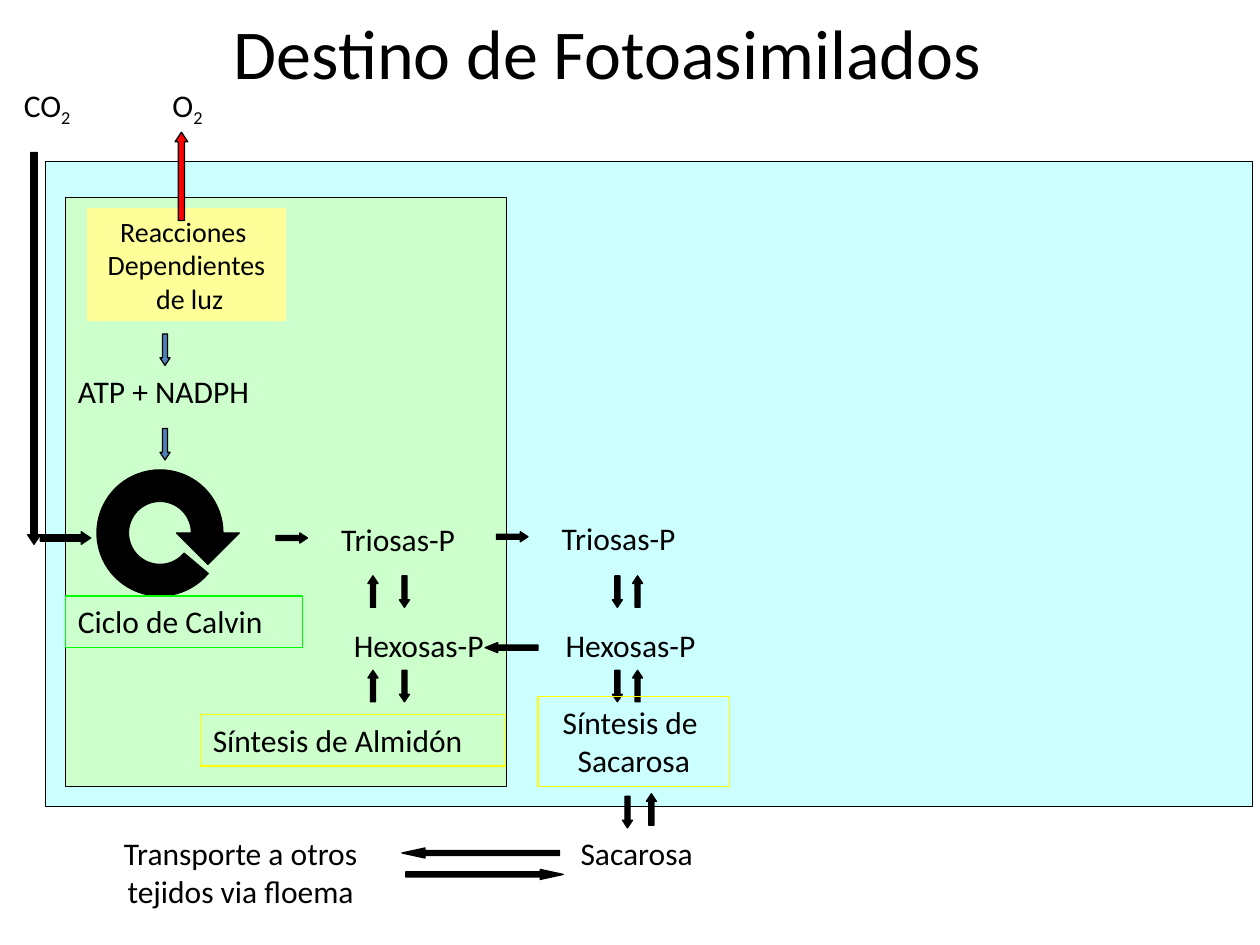
from dataclasses import dataclass
from math import cos, radians, sin
from typing import Optional

from pptx import Presentation
from pptx.dml.color import RGBColor
from pptx.enum.shapes import MSO_SHAPE
from pptx.enum.text import MSO_ANCHOR, MSO_AUTO_SIZE, PP_ALIGN
from pptx.util import Inches, Pt

BLACK = RGBColor(0x00, 0x00, 0x00)
CYAN = RGBColor(0xCC, 0xFF, 0xFF)
PALE_GREEN = RGBColor(0xCC, 0xFF, 0xCC)
PALE_YELLOW = RGBColor(0xFF, 0xFF, 0x99)
YELLOW = RGBColor(0xFF, 0xFF, 0x00)
GREEN = RGBColor(0x00, 0xFF, 0x00)
RED = RGBColor(0xFF, 0x00, 0x00)
BLUE = RGBColor(0x4F, 0x81, 0xBD)

UP, DOWN = MSO_SHAPE.UP_ARROW, MSO_SHAPE.DOWN_ARROW
LEFT, RIGHT = MSO_SHAPE.LEFT_ARROW, MSO_SHAPE.RIGHT_ARROW


@dataclass(frozen=True)
class Area:
    left: float
    top: float
    width: float
    height: float

    def lengths(self) -> tuple:
        return tuple(map(Inches, (self.left, self.top, self.width, self.height)))


@dataclass(frozen=True)
class Label:
    lines: tuple[str, ...]
    area: Area
    centred: bool = False
    size: int = 18
    fill: Optional[RGBColor] = None
    border: Optional[RGBColor] = None
    subscript: str = ""
    wrap: bool = False
    anchor: MSO_ANCHOR = MSO_ANCHOR.TOP
    auto_size: MSO_AUTO_SIZE = MSO_AUTO_SIZE.SHAPE_TO_FIT_TEXT


@dataclass(frozen=True)
class Arrow:
    kind: MSO_SHAPE
    area: Area
    head: float = 0.75
    fill: RGBColor = BLACK


def paint(shape, fill: Optional[RGBColor], border: Optional[RGBColor]) -> None:
    shape.shadow.inherit = False
    if fill is None:
        shape.fill.background()
    else:
        shape.fill.solid()
        shape.fill.fore_color.rgb = fill
    if border is None:
        shape.line.fill.background()
    else:
        shape.line.color.rgb = border
        shape.line.width = Pt(0.75)


def add_span(para, text: str, size: int):
    span = para.add_run()
    span.text = text
    for name, value in {"name": "Calibri", "size": Pt(size)}.items():
        setattr(span.font, name, value)
    span.font.color.rgb = BLACK
    return span


def draw_panel(page, area: Area, fill: RGBColor) -> None:
    panel = page.shapes.add_shape(MSO_SHAPE.RECTANGLE, *area.lengths())
    paint(panel, fill, BLACK)


def draw_label(page, label: Label) -> None:
    if label.fill or label.border:
        box = page.shapes.add_shape(MSO_SHAPE.RECTANGLE, *label.area.lengths())
        paint(box, label.fill, label.border)
    else:
        box = page.shapes.add_textbox(*label.area.lengths())
    frame = box.text_frame
    frame_format = {
        "word_wrap": label.wrap,
        "auto_size": label.auto_size,
        "vertical_anchor": label.anchor,
    }
    for name, value in frame_format.items():
        setattr(frame, name, value)
    for index, line in enumerate(label.lines):
        para = frame.add_paragraph() if index else frame.paragraphs[0]
        para.alignment = PP_ALIGN.CENTER if label.centred else PP_ALIGN.LEFT
        add_span(para, line, label.size)
    if label.subscript:
        span = add_span(para, label.subscript, label.size)
        span.font._element.set("baseline", "-25000")


def draw_arrow(page, arrow: Arrow) -> None:
    shape = page.shapes.add_shape(arrow.kind, *arrow.area.lengths())
    paint(shape, arrow.fill, BLACK)
    shape.adjustments[0] = 0.5
    shape.adjustments[1] = arrow.head


def arc(radius: float, angles: range) -> list[tuple[float, float]]:
    centre_x, centre_y = 1.27, 4.23
    return [
        (centre_x + radius * cos(radians(angle)), centre_y + radius * sin(radians(angle)))
        for angle in angles
    ]


def draw_calvin_cycle(page) -> None:
    inner = arc(0.25, range(360, 39, -5))
    outer = arc(0.5, range(40, 361, 5))
    head = [(1.9, 4.23), (1.65, 4.48), (1.4, 4.23)]
    points = [(Inches(x), Inches(y)) for x, y in inner + outer + head]
    builder = page.shapes.build_freeform(*points[0])
    builder.add_line_segments(points[1:], close=True)
    paint(builder.convert_to_shape(), BLACK, BLACK)


def exchange(down_left: float, up_left: float, down_top: float, up_top: float) -> list[Arrow]:
    return [
        Arrow(DOWN, Area(down_left, down_top, 0.08, 0.25)),
        Arrow(UP, Area(up_left, up_top, 0.08, 0.25)),
    ]


TITLE = Label(("Destino de Fotoasimilados",), Area(0.57, -0.22, 8.5, 1.25), centred=True,
              size=40, wrap=True, anchor=MSO_ANCHOR.MIDDLE, auto_size=MSO_AUTO_SIZE.NONE)
LIGHT_REACTIONS = Label(("Reacciones ", "Dependientes", " de luz"), Area(0.69, 1.65, 1.58, 0.9),
                        centred=True, size=16, fill=PALE_YELLOW, wrap=True)
LABELS = [
    Label(("CO",), Area(0.09, 0.63, 0.59, 0.4), subscript="2"),
    Label(("O",), Area(1.27, 0.63, 0.45, 0.4), subscript="2"),
    Label(("ATP + NADPH",), Area(0.52, 2.9, 1.85, 0.4)),
    Label(("Ciclo de Calvin",), Area(0.52, 4.73, 1.88, 0.41), border=GREEN),
    Label(("Triosas-P",), Area(2.61, 4.08, 1.27, 0.4)),
    Label(("Triosas-P",), Area(4.36, 4.07, 1.27, 0.4)),
    Label(("Hexosas-P",), Area(2.71, 4.92, 1.42, 0.4)),
    Label(("Hexosas-P",), Area(4.39, 4.92, 1.42, 0.4)),
    Label(("Síntesis de Almidón",), Area(1.59, 5.67, 2.42, 0.41), border=YELLOW),
    Label(("Síntesis de ", "Sacarosa"), Area(4.27, 5.53, 1.52, 0.71), centred=True, border=YELLOW),
    Label((" Sacarosa",), Area(4.36, 6.57, 1.33, 0.4), centred=True),
    Label((" Transporte a otros ", "tejidos via floema"), Area(0.72, 6.57, 2.38, 0.7), centred=True),
]
ARROWS = [
    Arrow(UP, Area(1.39, 1.05, 0.1, 0.7), fill=RED),
    Arrow(DOWN, Area(0.22, 1.21, 0.1, 3.11)),
    Arrow(RIGHT, Area(0.32, 4.22, 0.4, 0.1)),
    Arrow(RIGHT, Area(2.19, 4.23, 0.25, 0.08)),
    Arrow(RIGHT, Area(3.94, 4.22, 0.25, 0.08)),
    Arrow(LEFT, Area(3.85, 5.1, 0.42, 0.08), head=1.25),
    Arrow(LEFT, Area(3.19, 6.73, 1.25, 0.08), head=2.29),
    Arrow(RIGHT, Area(3.22, 6.9, 1.25, 0.08), head=2.29),
    *(Arrow(DOWN, Area(1.27, top, 0.08, 0.25), fill=BLUE) for top in (2.65, 3.4)),
    *(arrow for top in (4.57, 5.32) for down, up in ((3.17, 2.92), (4.86, 5.02))
      for arrow in exchange(down, up, top, top)),
    *exchange(4.94, 5.13, 6.32, 6.3),
]


def main() -> None:
    deck = Presentation()
    deck.slide_width, deck.slide_height = Inches(10), Inches(7.5)
    page = deck.slides.add_slide(deck.slide_layouts[6])
    draw_panel(page, Area(0.36, 1.28, 9.58, 5.12), CYAN)
    draw_label(page, TITLE)
    draw_panel(page, Area(0.52, 1.57, 3.5, 4.67), PALE_GREEN)
    draw_label(page, LIGHT_REACTIONS)
    draw_calvin_cycle(page)
    for arrow in ARROWS:
        draw_arrow(page, arrow)
    for label in LABELS:
        draw_label(page, label)
    deck.save("out.pptx")


if __name__ == "__main__":
    main()
